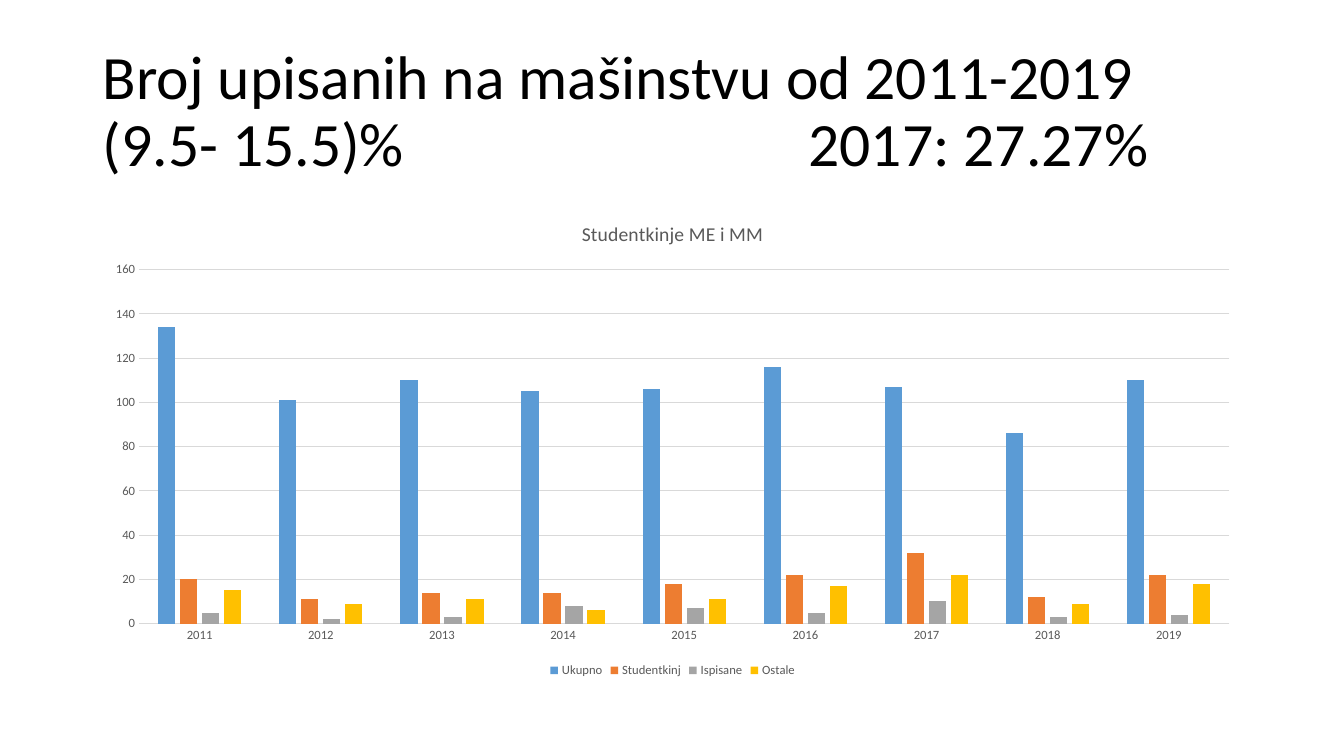
import pptx
import pptx.chart.data
import pptx.dml.color
import pptx.enum.chart
import pptx.enum.text
import pptx.oxml
import pptx.oxml.ns
import pptx.util
import lxml.etree

WIDE, HIGH = 13.33, 7.5
FONT, BLACK, GRAY, PALE = "Calibri", "000000", "595959", "D9D9D9"
YEARS = [str(year) for year in range(2011, 2020)]
SERIES = [
    ("Ukupno", "5B9BD5", (134, 101, 110, 105, 106, 116, 107, 86, 110)),
    ("Studentkinj", "ED7D31", (20, 11, 14, 14, 18, 22, 32, 12, 22)),
    ("Ispisane", "A5A5A5", (5, 2, 3, 8, 7, 5, 10, 3, 4)),
    ("Ostale", "FFC000", (15, 9, 11, 6, 11, 17, 22, 9, 18)),
]


def shade(hexa):
    """Turn a hex string into a colour."""
    return pptx.dml.color.RGBColor.from_string(hexa)


def box(left, top, width, height):
    """Turn shares of the slide into left, top, width and height."""
    return [pptx.util.Inches(share * side)
            for share, side in zip((left, top, width, height), (WIDE, HIGH) * 2)]


def style(font, size, color):
    """Set the face, size and colour of a font."""
    font.name, font.size, font.bold = FONT, pptx.util.Pt(size), False
    font.color.rgb = shade(color)


def rule(line):
    """Draw a thin pale line."""
    line.color.rgb = shade(PALE)
    line.width = pptx.util.Pt(0.75)


def add_title(slide, area, lines, stop):
    """Fill the title with lines, whose tabs go to one stop in inches."""
    title = slide.shapes.title
    title.left, title.top, title.width, title.height = area
    frame = title.text_frame
    frame.word_wrap = True
    frame.auto_size = pptx.enum.text.MSO_AUTO_SIZE.NONE
    frame.vertical_anchor = pptx.enum.text.MSO_ANCHOR.MIDDLE
    para = frame.paragraphs[0]
    para.alignment = pptx.enum.text.PP_ALIGN.LEFT
    para.line_spacing = 0.9
    tabs = lxml.etree.SubElement(para._p.get_or_add_pPr(), pptx.oxml.ns.qn("a:tabLst"))
    lxml.etree.SubElement(tabs, pptx.oxml.ns.qn("a:tab"),
                          pos=str(pptx.util.Inches(stop)), algn="l")
    for index, line in enumerate(lines):
        if index:
            para.add_line_break()
        run = para.add_run()
        run.text = line
        style(run.font, 44, BLACK)


def format_axis(axis):
    """Give an axis small gray labels and no ticks."""
    axis.major_tick_mark = axis.minor_tick_mark = pptx.enum.chart.XL_TICK_MARK.NONE
    style(axis.tick_labels.font, 9, GRAY)


def add_bars(slide, area, heading):
    """Add the clustered columns with heading, axes and legend."""
    data = pptx.chart.data.CategoryChartData()
    data.categories = YEARS
    for name, _, values in SERIES:
        data.add_series(name, values)
    kind = pptx.enum.chart.XL_CHART_TYPE.COLUMN_CLUSTERED
    chart = slide.shapes.add_chart(kind, *area, data).chart
    style(chart.font, 10, BLACK)

    chart.has_title = True
    run = chart.chart_title.text_frame.paragraphs[0].add_run()
    run.text = heading
    style(run.font, 14, GRAY)
    chart.chart_title.include_in_layout = False

    chart.has_legend = True
    chart.legend.position = pptx.enum.chart.XL_LEGEND_POSITION.BOTTOM
    chart.legend.include_in_layout = False
    style(chart.legend.font, 9, GRAY)

    format_axis(chart.category_axis)
    rule(chart.category_axis.format.line)
    scale = chart.value_axis
    format_axis(scale)
    scale.minimum_scale, scale.maximum_scale, scale.major_unit = 0, 160, 20
    scale.format.line.fill.background()
    rule(scale.major_gridlines.format.line)

    plot = chart.plots[0]
    plot.gap_width, plot.overlap = 219, -27
    plot.vary_by_categories = False
    for bars, (_, color, _) in zip(plot.series, SERIES):
        bars.format.fill.solid()
        bars.format.fill.fore_color.rgb = shade(color)


def main():
    """Build and save the slide."""
    deck = pptx.Presentation()
    deck.slide_width, deck.slide_height = box(0, 0, 1, 1)[2:]
    slide = deck.slides.add_slide(deck.slide_layouts[5])
    left, width = 0.069, 0.863
    add_title(slide, box(left, 0.053, width, 0.193),
              ["Broj upisanih na mašinstvu od 2011-2019", "(9.5- 15.5)%\t2017: 27.27%"], 7)
    add_bars(slide, box(left, 0.267, width, 0.635), "Studentkinje ME i MM")
    deck.save("out.pptx")


if __name__ == "__main__":
    main()
